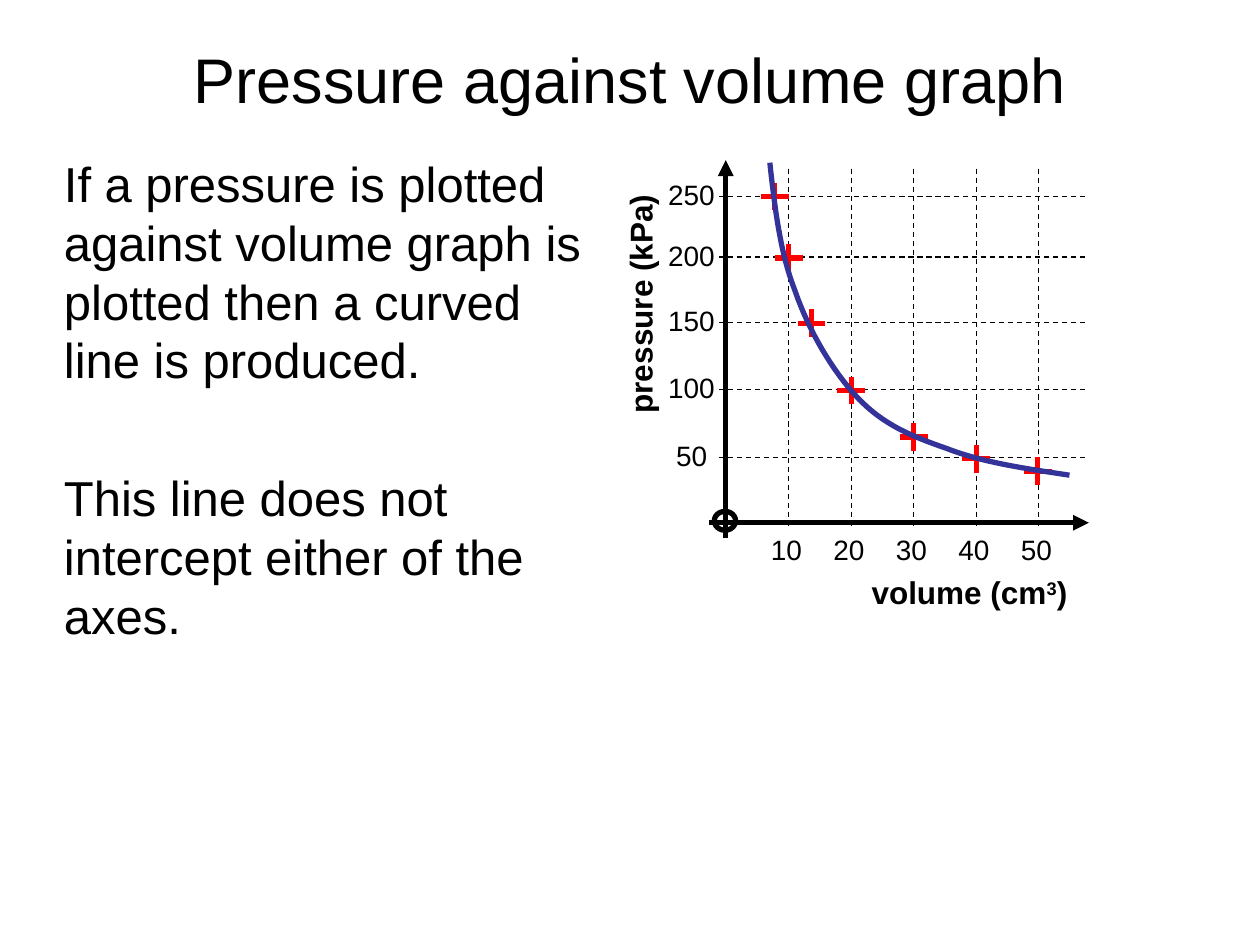
import pptx
import pptx.dml.color
import pptx.enum.dml
import pptx.enum.shapes
import pptx.enum.text
import pptx.oxml.ns
import pptx.util
from lxml import etree

Cm = pptx.util.Cm
Pt = pptx.util.Pt
BLACK = pptx.dml.color.RGBColor(0x00, 0x00, 0x00)
RED = pptx.dml.color.RGBColor(0xFF, 0x00, 0x00)
INDIGO = pptx.dml.color.RGBColor(0x33, 0x33, 0x99)
LEFT = pptx.enum.text.PP_ALIGN.LEFT
CENTER = pptx.enum.text.PP_ALIGN.CENTER
TOP = pptx.enum.text.MSO_ANCHOR.TOP
MIDDLE = pptx.enum.text.MSO_ANCHOR.MIDDLE


class GraphSlide:
    font_name = "Arial"
    heavy = Pt(3)
    fine = Pt(0.75)

    def __init__(self, slide):
        self.shapes = slide.shapes

    def text(self, box, paragraphs, size, bold=False, align=LEFT, anchor=TOP,
             gap=0, rotation=0):
        label = self.shapes.add_textbox(*map(Cm, box))
        label.rotation = rotation
        frame = label.text_frame
        frame.word_wrap = True
        frame.vertical_anchor = anchor
        for index, runs in enumerate(paragraphs):
            paragraph = frame.add_paragraph() if index else frame.paragraphs[0]
            paragraph.alignment = align
            paragraph.space_before = Pt(gap if index else 0)
            for words, raised in runs:
                run = paragraph.add_run()
                run.text = words
                run.font.name = self.font_name
                run.font.size = Pt(size)
                run.font.bold = bold
                run.font.color.rgb = BLACK
                if raised:
                    run.font._element.set("baseline", "30000")

    def line(self, start, end, color=BLACK, width=heavy, dashed=False, arrow=False):
        stroke = self.shapes.add_connector(
            pptx.enum.shapes.MSO_CONNECTOR.STRAIGHT, *map(Cm, (*start, *end)))
        stroke.line.color.rgb = color
        stroke.line.width = width
        if dashed:
            stroke.line.dash_style = pptx.enum.dml.MSO_LINE.DASH
        properties = stroke._element.spPr
        if arrow:
            etree.SubElement(stroke.line._get_or_add_ln(),
                             pptx.oxml.ns.qn("a:tailEnd"), type="triangle")
        etree.SubElement(properties, pptx.oxml.ns.qn("a:effectLst"))

    def outline(self, shape, color):
        shape.shadow.inherit = False
        shape.fill.background()
        shape.line.color.rgb = color
        shape.line.width = self.heavy

    def ring(self, box):
        self.outline(self.shapes.add_shape(
            pptx.enum.shapes.MSO_SHAPE.OVAL, *map(Cm, box)), BLACK)

    def cross(self, x, y, arm=0.28):
        self.line((x, y - arm), (x, y + arm), RED)
        self.line((x - arm, y), (x + arm, y), RED)

    def curve(self, start, segments, steps=16):
        points = []
        origin = start
        for first, second, end in segments:
            for step in range(1, steps + 1):
                t = step / steps
                u = 1 - t
                points.append(tuple(
                    Cm(u**3 * a + 3 * u * u * t * b + 3 * u * t * t * c + t**3 * d)
                    for a, b, c, d in zip(origin, first, second, end)))
            origin = end
        builder = self.shapes.build_freeform(Cm(start[0]), Cm(start[1]))
        builder.add_line_segments(points, close=False)
        self.outline(builder.convert_to_shape(), INDIGO)


def main():
    deck = pptx.Presentation()
    deck.slide_width = Cm(25.4)
    deck.slide_height = Cm(19.05)
    graph = GraphSlide(deck.slides.add_slide(deck.slide_layouts[6]))

    graph.text((1.27, 0.76, 22.86, 1.65), [[("Pressure against volume graph", False)]],
               36, align=CENTER, anchor=MIDDLE)
    graph.text((1.04, 2.97, 11.28, 13.28), [
        [("If a pressure is plotted against volume graph is plotted "
          "then a curved line is produced.", False)],
        [("This line does not intercept either of the axes.", False)],
    ], 28, gap=45)

    graph.line((14.63, 10.85), (14.63, 3.23), arrow=True)
    graph.line((14.3, 10.54), (21.95, 10.54), arrow=True)
    graph.ring((14.4, 10.31, 0.43, 0.38))
    graph.text((10.44, 5.61, 4.93, 1.02), [[("pressure (kPa)", False)]],
               18, bold=True, rotation=270)
    graph.text((17.32, 11.43, 4.75, 1.02),
               [[("volume (cm", False), ("3", True), (")", False)]], 18, bold=True)

    pressure_ticks = {50: 9.22, 100: 7.85, 150: 6.5, 200: 5.18, 250: 3.96}
    for pressure, y in pressure_ticks.items():
        graph.line((14.49, y), (21.9, y), width=graph.fine, dashed=True)
        indent = 0.16 if pressure < 100 else 0
        graph.text((13.22 + indent, y - 0.5, 1.93, 0.94),
                   [[(str(pressure), False)]], 16)
    for index in range(5):
        x = 15.9 + 1.26 * index
        graph.line((x, 3.4), (x, 10.67), width=graph.fine, dashed=True)
        graph.text((x - 0.61, 10.62, 1.3, 0.94),
                   [[(str(10 * (index + 1)), False)]], 16)

    readings = [(15.62, 3.96), (15.9, 5.2), (16.36, 6.52), (17.16, 7.87),
                (18.42, 8.81), (19.68, 9.25), (20.92, 9.5)]
    for volume_x, pressure_y in readings:
        graph.cross(volume_x, pressure_y)
    graph.curve((15.52, 3.28), [
        ((15.62, 4.17), (15.72, 5.08), (16.03, 5.87)),
        ((16.31, 6.68), (16.79, 7.49), (17.3, 8.03)),
        ((17.81, 8.56), (18.36, 8.79), (19.08, 9.04)),
        ((19.79, 9.32), (20.68, 9.45), (21.56, 9.58)),
    ])
    deck.save("out.pptx")


if __name__ == "__main__":
    main()
